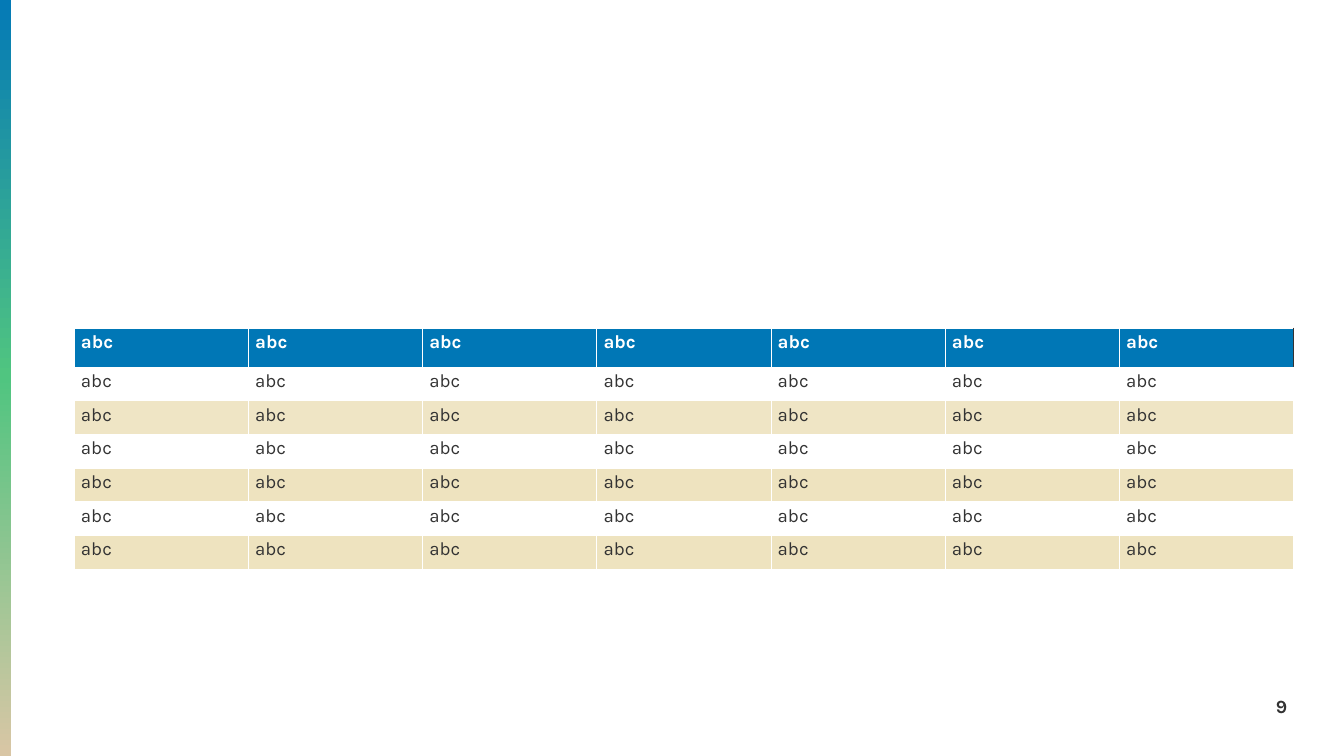
import copy

import pptx
import pptx.dml.color
import pptx.enum.shapes
import pptx.enum.text
import pptx.oxml
import pptx.oxml.ns
import pptx.util
from lxml import etree

Pt = pptx.util.Pt
RGBColor = pptx.dml.color.RGBColor
qn = pptx.oxml.ns.qn

WHITE = RGBColor(0xFF, 0xFF, 0xFF)
DARK = RGBColor(0x33, 0x33, 0x33)
BLUE = RGBColor(0x00, 0x77, 0xB6)
SAND = RGBColor(0xEE, 0xE3, 0xBF)
BAR_COLORS = [
    RGBColor(0x04, 0x7A, 0xB6),
    RGBColor(0x50, 0xC5, 0x80),
    RGBColor(0xD9, 0xC6, 0xA5),
]


class SlideBuilder:
    font = "Karla"
    size = 20

    def __init__(self, s):
        self.s = s

    def run(self, p, text, color, bold=False):
        r = p.add_run()
        r.text = text
        r.font.name = self.font
        r.font.size = Pt(self.size)
        r.font.bold = bold
        r.font.color.rgb = color

    def gradient_bar(self, x, y, w, h, colors):
        sp = self.s.shapes.add_shape(
            pptx.enum.shapes.MSO_SHAPE.RECTANGLE, Pt(x), Pt(y), Pt(w), Pt(h)
        )
        sp.shadow.inherit = False
        sp.line.fill.background()
        sp.fill.gradient()
        sp.fill.gradient_angle = 270
        stops = next(sp._element.spPr.iter(qn("a:gsLst")))
        stops.insert(1, copy.deepcopy(stops[0]))
        for i, (stop, color) in enumerate(zip(sp.fill.gradient_stops, colors)):
            stop.position = i / (len(colors) - 1)
            stop.color.rgb = color

    def text(self, x, y, w, h, text, color, align, bold=False):
        tf = self.s.shapes.add_textbox(Pt(x), Pt(y), Pt(w), Pt(h)).text_frame
        tf.word_wrap = True
        p = tf.paragraphs[0]
        p.alignment = align
        self.run(p, text, color, bold)

    def border(self, cell, side, color):
        ln = etree.SubElement(cell._tc.get_or_add_tcPr(), qn(f"a:ln{side}"), w=str(Pt(1)))
        fill = etree.SubElement(ln, qn("a:solidFill"))
        etree.SubElement(fill, qn("a:srgbClr"), val=str(color))

    def cell(self, cell, text, color, bold, fill, right_border, opacity):
        for side in "LRTB":
            self.border(cell, side, right_border if side == "R" else WHITE)
        if fill is None:
            cell.fill.background()
        else:
            cell.fill.solid()
            cell.fill.fore_color.rgb = fill
            if opacity < 100:
                clr = cell._tc.tcPr.find(qn("a:solidFill"))[0]
                etree.SubElement(clr, qn("a:alpha"), val=str(opacity * 1000))
        self.run(cell.text_frame.paragraphs[0], text, color, bold)

    def table(self, x, y, w, header_h, row_h, rows):
        n_rows, n_cols = len(rows), len(rows[0])
        h = header_h + row_h * (n_rows - 1)
        table = self.s.shapes.add_table(n_rows, n_cols, Pt(x), Pt(y), Pt(w), Pt(h)).table
        table.first_row = True
        table.horz_banding = False
        for col in table.columns:
            col.width = Pt(w / n_cols)
        for i, row in enumerate(rows):
            header = i == 0
            table.rows[i].height = Pt(header_h if header else row_h)
            fill = BLUE if header else SAND if i % 2 == 0 else None
            for j, text in enumerate(row):
                self.cell(
                    table.cell(i, j),
                    text,
                    WHITE if header else DARK,
                    header,
                    fill,
                    DARK if header and j == n_cols - 1 else WHITE,
                    90 if i == 2 else 100,
                )


def main():
    prs = pptx.Presentation()
    prs.slide_width, prs.slide_height = Pt(1440), Pt(810)
    b = SlideBuilder(prs.slides.add_slide(prs.slide_layouts[6]))
    b.gradient_bar(0, 0, 12, 810, BAR_COLORS)
    b.text(1326.2, 741, 60, 29, "9", DARK, pptx.enum.text.PP_ALIGN.RIGHT, bold=True)
    b.table(79.5, 351.4, 1306.5, 41.8, 36.1, [["abc"] * 7 for _ in range(7)])
    prs.save("out.pptx")


if __name__ == "__main__":
    main()
